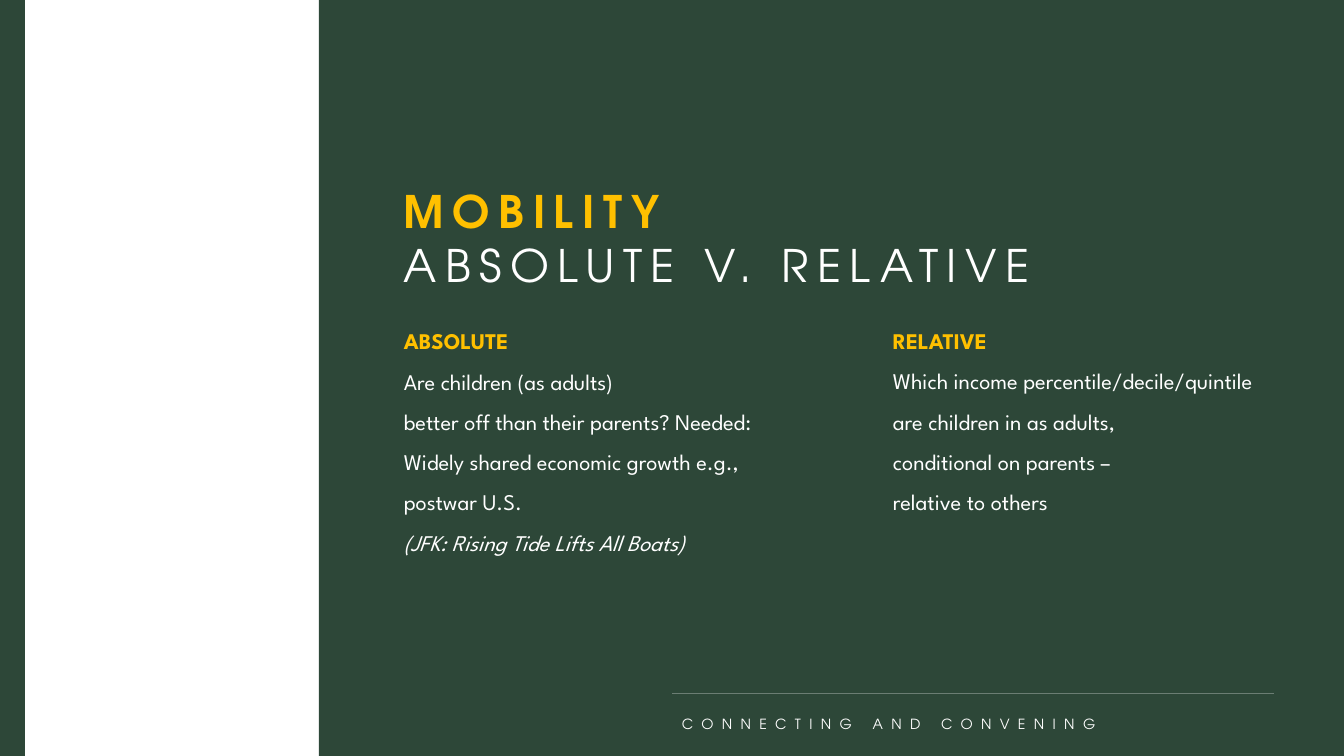
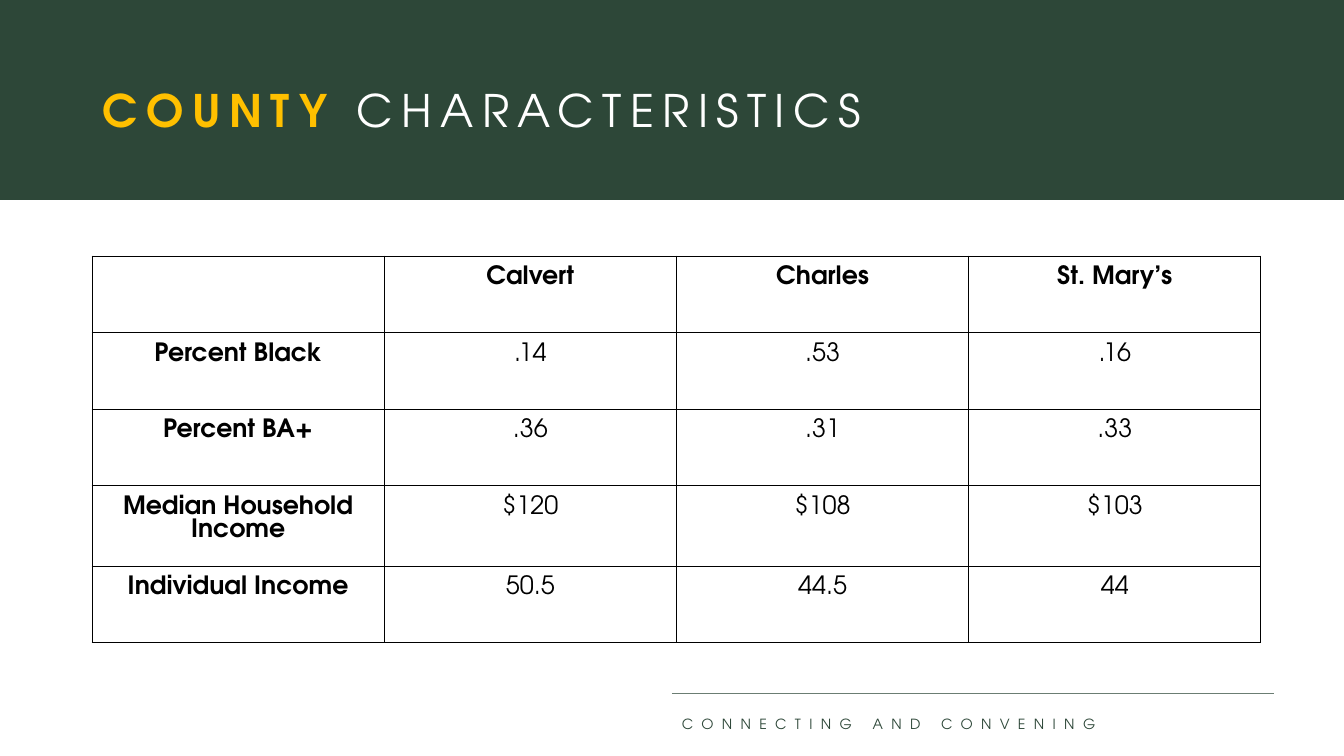
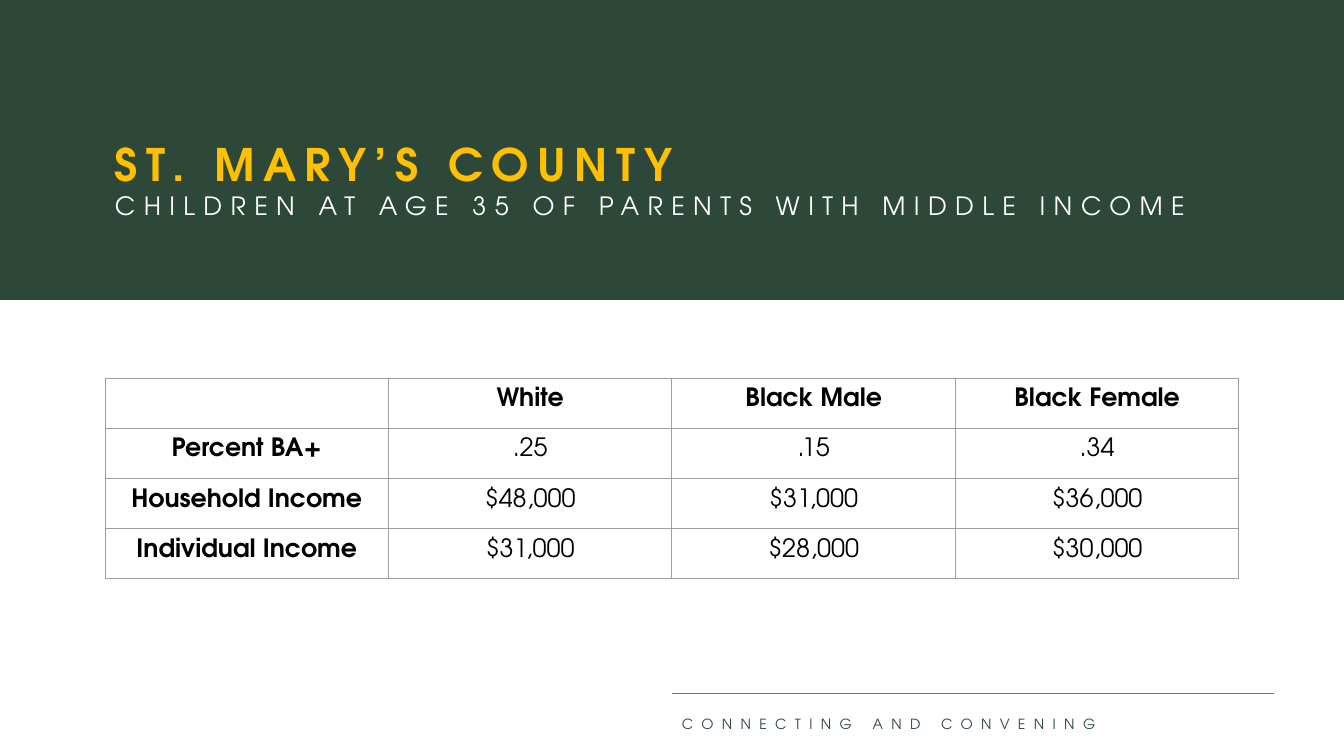
from lxml.etree import SubElement
from pptx import Presentation
from pptx.dml.color import RGBColor
from pptx.enum.shapes import MSO_CONNECTOR, MSO_SHAPE
from pptx.enum.text import MSO_ANCHOR, PP_ALIGN
from pptx.oxml.ns import qn
from pptx.util import Pt

SCALE = 914400 / 100.8
WIDTH, HEIGHT = 1344, 756
GREEN, GOLD, WHITE, BLACK = "2D4738", "FFC000", "FFFFFF", "000000"
RULE, GRID = "6B7D73", "9E9E9E"
DISPLAY, BODY = "TeX Gyre Adventor", "League Spartan"


def px(length):
    return round(length * SCALE)


def color(value):
    return RGBColor.from_string(value)


def add_span(para, text, size=16, font=BODY, fill=WHITE, bold=False, italic=False, spacing=0):
    for index, line in enumerate(text.split("\n")):
        if index:
            para.add_line_break()
        if not line:
            continue
        span = para.add_run()
        span.text = line
        span.font.size = Pt(size)
        span.font.name = font
        span.font.bold = bold
        span.font.italic = italic
        span.font.color.rgb = color(fill)
        if spacing:
            span.font._element.set("spc", str(spacing * 100))


class Slides:
    strong = dict(size=32, font=DISPLAY, fill=GOLD, bold=True, spacing=6)
    light = dict(size=32, font=DISPLAY, spacing=6)
    heading = dict(fill=GOLD, bold=True)

    def __init__(self):
        self.deck = Presentation()
        self.deck.slide_width = px(WIDTH)
        self.deck.slide_height = px(HEIGHT)
        self.page = None

    def start(self, bands, footer_color=GREEN):
        self.page = self.deck.slides.add_slide(self.deck.slide_layouts[6])
        for place in bands:
            self.band(*place)
        self.rule(672, 693, 1274)
        footer = dict(size=10, font=DISPLAY, fill=footer_color, spacing=6)
        self.text(672, 711, 631, 27, [[("CONNECTING AND CONVENING", footer)]])

    def band(self, left, top, width, height):
        box = self.page.shapes.add_shape(
            MSO_SHAPE.RECTANGLE, px(left), px(top), px(width), px(height))
        box.shadow.inherit = False
        box.fill.solid()
        box.fill.fore_color.rgb = color(GREEN)
        box.line.fill.background()

    def rule(self, left, top, right):
        line = self.page.shapes.add_connector(
            MSO_CONNECTOR.STRAIGHT, px(left), px(top), px(right), px(top))
        line.line.color.rgb = color(RULE)
        line.line.width = Pt(0.5)
        SubElement(line._element.spPr, qn("a:effectLst"))

    def text(self, left, top, width, height, paragraphs,
             line_spacing=1.0, indent=0, anchor=MSO_ANCHOR.TOP):
        box = self.page.shapes.add_textbox(px(left), px(top), px(width), px(height))
        frame = box.text_frame
        frame.word_wrap = True
        frame.vertical_anchor = anchor
        for index, spans in enumerate(paragraphs):
            para = frame.add_paragraph() if index else frame.paragraphs[0]
            para.line_spacing = line_spacing
            if indent:
                para._p.get_or_add_pPr().set("marL", str(px(indent)))
            for text, style in spans:
                add_span(para, text, **style)

    def table(self, left, top, width, height, rows, border):
        grid = self.page.shapes.add_table(
            len(rows), len(rows[0]), px(left), px(top), px(width), px(height)).table
        grid.first_row = grid.horz_banding = False
        for column in grid.columns:
            column.width = px(width / len(rows[0]))
        for row in grid.rows:
            row.height = px(height / len(rows))
        for row_index, values in enumerate(rows):
            for column_index, value in enumerate(values):
                self.cell(grid.cell(row_index, column_index), value,
                          row_index == 0 or column_index == 0, border)

    def cell(self, cell, value, bold, border):
        margin = px(10) if value else 0
        cell.margin_left = cell.margin_right = margin
        cell.margin_top = cell.margin_bottom = margin
        para = cell.text_frame.paragraphs[0]
        para.alignment = PP_ALIGN.CENTER
        add_span(para, value, size=18, font=DISPLAY, fill=BLACK, bold=bold)
        properties = cell._tc.get_or_add_tcPr()
        for side in ("lnL", "lnR", "lnT", "lnB"):
            line = SubElement(properties, qn(f"a:{side}"), w=str(Pt(0.75)))
            fill = SubElement(line, qn("a:solidFill"))
            SubElement(fill, qn("a:srgbClr"), val=border)
        cell.fill.background()


def mobility(slides):
    slides.start([(319, 0, WIDTH - 319, HEIGHT), (0, 0, 25, HEIGHT)], WHITE)
    slides.text(394, 179, 926, 119, [
        [("MOBILITY", slides.strong)],
        [("ABSOLUTE V. RELATIVE", slides.light)],
    ])
    slides.text(394, 309, 402, 440, [[
        ("ABSOLUTE\n", slides.heading),
        ("Are children (as adults)\nbetter off than their parents? Needed: "
         "Widely shared economic growth e.g., postwar U.S.\n", {}),
        ("(JFK: Rising Tide Lifts All Boats)", dict(italic=True)),
    ]], line_spacing=1.5)
    slides.text(845, 309, 459, 249, [
        [("RELATIVE\n", slides.heading), ("Which income percentile/decile/quintile", {})],
        [("are children in as adults,", {})],
        [("conditional on parents –", {})],
        [("relative to others", {})],
    ], line_spacing=1.5, indent=38)


def county_characteristics(slides):
    slides.start([(0, 0, WIDTH, 200)])
    slides.text(93, 40, 1159, 146, [
        [("COUNTY", slides.strong), (" CHARACTERISTICS", slides.light)],
    ], line_spacing=0.9, anchor=MSO_ANCHOR.MIDDLE)
    slides.table(92, 256, 1169, 383, [
        ["", "Calvert", "Charles", "St. Mary’s"],
        ["Percent Black", ".14", ".53", ".16"],
        ["Percent BA+", ".36", ".31", ".33"],
        ["Median Household Income", "$120", "$108", "$103"],
        ["Individual Income", "50.5", "44.5", "44"],
    ], BLACK)


def saint_marys_county(slides):
    slides.start([(0, 0, WIDTH, 300)])
    slides.text(105, 57, 1159, 244, [
        [("ST. MARY’S COUNTY", slides.strong)],
        [("CHILDREN AT AGE 35 OF PARENTS WITH MIDDLE INCOME", {**slides.light, "size": 18})],
    ], anchor=MSO_ANCHOR.MIDDLE)
    slides.table(105, 378, 1134, 174, [
        ["", "White", "Black Male", "Black Female"],
        ["Percent BA+", ".25", ".15", ".34"],
        ["Household Income", "$48,000", "$31,000", "$36,000"],
        ["Individual Income", "$31,000", "$28,000", "$30,000"],
    ], GRID)


def main():
    slides = Slides()
    for build in (mobility, county_characteristics, saint_marys_county):
        build(slides)
    slides.deck.save("out.pptx")


if __name__ == "__main__":
    main()
